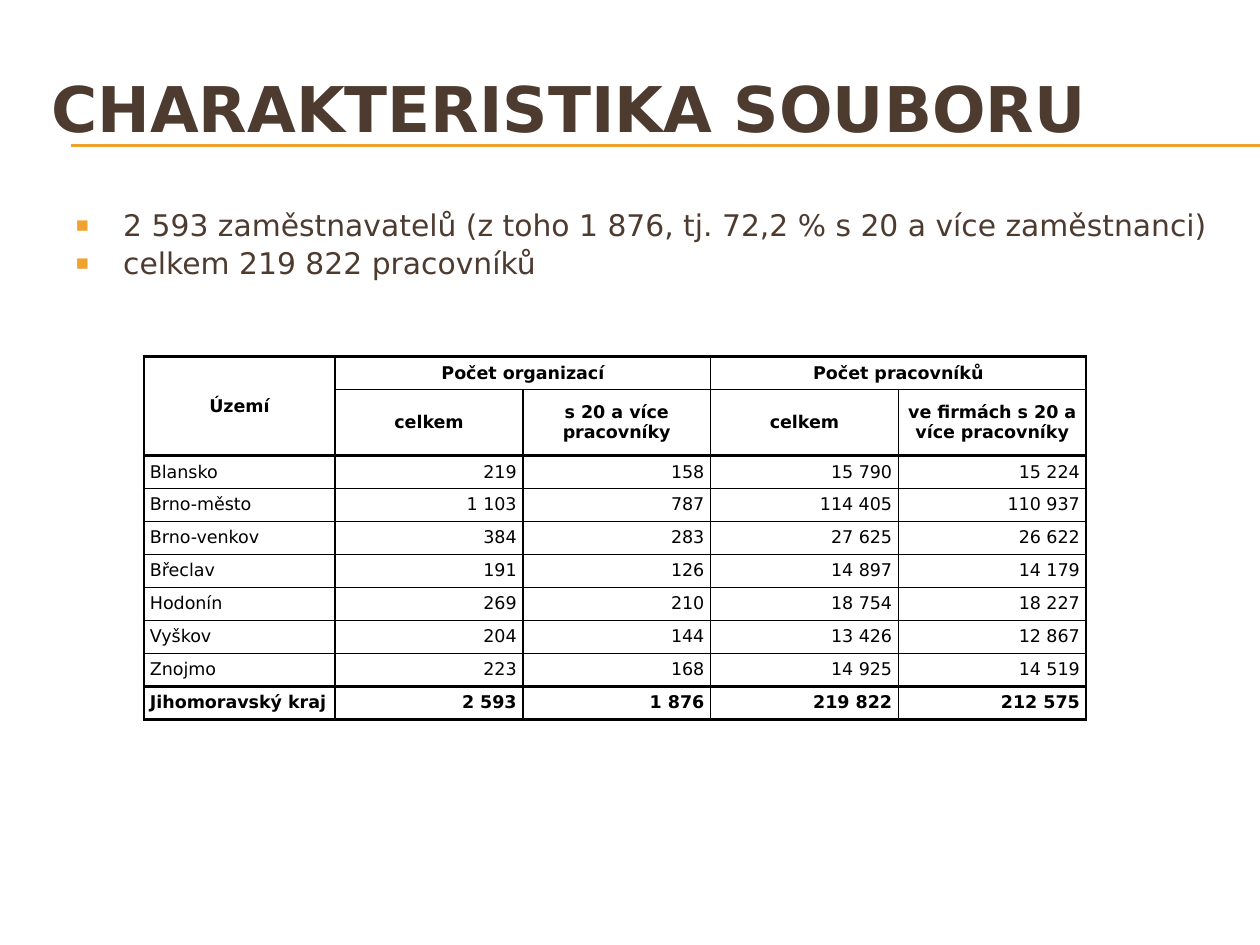
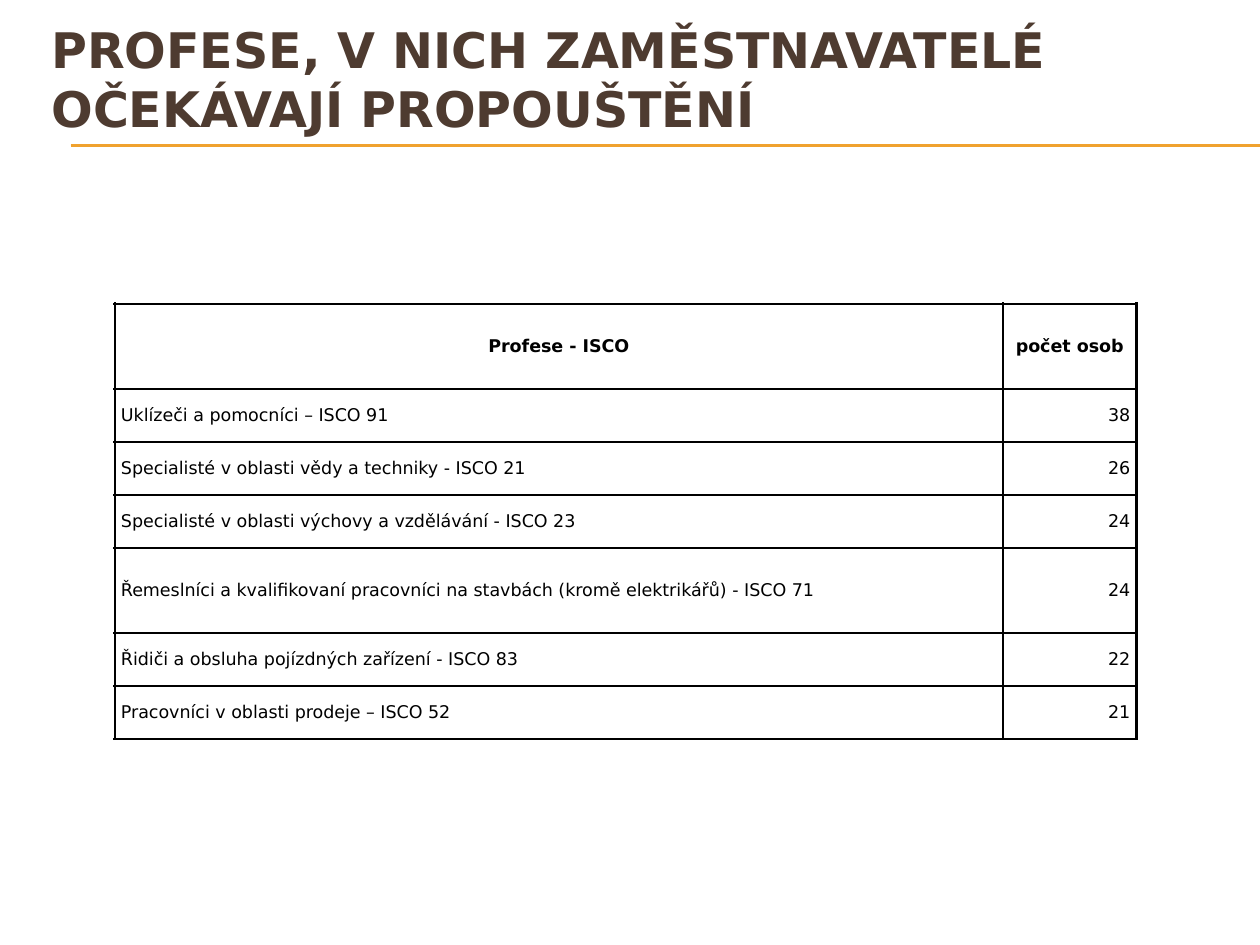
from dataclasses import dataclass

from pptx import Presentation
from pptx.dml.color import RGBColor as Color
from pptx.enum.shapes import MSO_CONNECTOR as Connector
from pptx.enum.text import MSO_ANCHOR as Anchor, PP_ALIGN as Align
from pptx.oxml.ns import qn
from pptx.util import Inches, Pt
from lxml.etree import SubElement

GRID_COLUMNS, GRID_ROWS = 100, 75


@dataclass(frozen=True)
class Theme:
    font: str = "DejaVu Sans"
    ink: str = "4E3B30"
    accent: str = "F0A22E"
    table_ink: str = "000000"
    title_size: int = 36
    long_title_size: int = 28
    body_size: int = 17
    table_size: int = 10
    rule_width: float = 0.75
    thin: float = 1
    heavy: float = 1.5


def set_attributes(target, values):
    for name, value in values.items():
        setattr(target, name, value)


class Deck:
    """Holds the theme and the current slide; lengths are grid columns and rows."""

    def __init__(self, theme):
        self.theme = theme
        self.presentation = Presentation()
        self.presentation.slide_width = Inches(10)
        self.presentation.slide_height = Inches(7.5)
        self.slide = None

    def across(self, columns):
        return round(self.presentation.slide_width * columns / GRID_COLUMNS)

    def down(self, rows):
        return round(self.presentation.slide_height * rows / GRID_ROWS)

    def place(self, left, top, width, height):
        return self.across(left), self.down(top), self.across(width), self.down(height)

    def style(self, font, size, color, bold=False):
        set_attributes(font, {"name": self.theme.font, "size": Pt(size), "bold": bold})
        font.color.rgb = Color.from_string(color)

    def add_slide(self, title, box, size):
        """Start a slide with its title and the double rule below it."""
        layout = self.presentation.slide_layouts[6]
        self.slide = self.presentation.slides.add_slide(layout)
        for row in (11.5, 11.6):
            self.add_rule(5.6, GRID_COLUMNS, row)
        frame = self.add_text_frame(box, Anchor.MIDDLE)
        frame.text = title
        self.style(frame.paragraphs[0].runs[0].font, size, self.theme.ink, bold=True)

    def add_rule(self, start, end, row):
        rule = self.slide.shapes.add_connector(
            Connector.STRAIGHT,
            self.across(start), self.down(row), self.across(end), self.down(row))
        rule.line.color.rgb = Color.from_string(self.theme.accent)
        rule.line.width = Pt(self.theme.rule_width)
        SubElement(rule._element.spPr, qn("a:effectLst"))

    def add_text_frame(self, box, anchor):
        frame = self.slide.shapes.add_textbox(*self.place(*box)).text_frame
        set_attributes(frame, {"word_wrap": True, "vertical_anchor": anchor})
        return frame

    def add_bullets(self, items, box, indent=3.8):
        frame = self.add_text_frame(box, Anchor.TOP)
        size = self.theme.body_size
        for index, item in enumerate(items):
            paragraph = frame.add_paragraph() if index else frame.paragraphs[0]
            paragraph.line_spacing = 0.9
            paragraph.space_before = Pt(0.2 * size if index else 0)
            self.add_bullet_mark(paragraph, self.across(indent))
            run = paragraph.add_run()
            run.text = item
            self.style(run.font, size, self.theme.ink)

    def add_bullet_mark(self, paragraph, indent):
        properties = paragraph._element.get_or_add_pPr()
        properties.set("marL", str(indent))
        properties.set("indent", str(-indent))
        color = SubElement(properties, qn("a:buClr"))
        SubElement(color, qn("a:srgbClr"), val=self.theme.accent)
        SubElement(properties, qn("a:buSzPct"), val="70000")
        SubElement(properties, qn("a:buFont"), typeface=self.theme.font)
        SubElement(properties, qn("a:buChar"), char="▪")

    def add_table(self, rows, left, top, widths, heights, header_rows=1,
                  merges=(), heavy_columns=(), heavy_rows=(), total_row=False):
        """Draw a ruled table; the outline, header edge and listed edges are heavy."""
        box = self.place(left, top, sum(widths), sum(heights))
        table = self.slide.shapes.add_table(len(rows), len(widths), *box).table
        set_attributes(table, {"first_row": False, "horz_banding": False})
        for column, width in zip(table.columns, widths):
            column.width = self.across(width)
        for row, height in zip(table.rows, heights):
            row.height = self.down(height)
        for first, last in merges:
            table.cell(*first).merge(table.cell(*last))

        heavy_x = {0, len(widths), *heavy_columns}
        heavy_y = {0, header_rows, len(rows), *heavy_rows}
        for y, row in enumerate(rows):
            is_header = y < header_rows
            is_bold = is_header or (total_row and y == len(rows) - 1)
            for x, text in enumerate(row):
                cell = table.cell(y, x)
                if cell.is_spanned:
                    continue
                body_align = Align.RIGHT if x else Align.LEFT
                self.fill_cell(cell, text, Align.CENTER if is_header else body_align, is_bold)
                self.border_cell(cell, {
                    "a:lnL": x in heavy_x,
                    "a:lnR": x + cell.span_width in heavy_x,
                    "a:lnT": y in heavy_y,
                    "a:lnB": y + cell.span_height in heavy_y,
                })
                cell.fill.background()

    def fill_cell(self, cell, text, alignment, bold):
        set_attributes(cell, {
            "text": text,
            "vertical_anchor": Anchor.MIDDLE,
            "margin_left": self.across(0.5),
            "margin_right": self.across(0.5),
            "margin_top": 0,
            "margin_bottom": 0,
        })
        paragraph = cell.text_frame.paragraphs[0]
        paragraph.alignment = alignment
        self.style(paragraph.runs[0].font, self.theme.table_size, self.theme.table_ink, bold)

    def border_cell(self, cell, edges):
        properties = cell._tc.get_or_add_tcPr()
        for tag, is_heavy in edges.items():
            width = Pt(self.theme.heavy if is_heavy else self.theme.thin)
            line = SubElement(properties, qn(tag), w=str(width))
            fill = SubElement(line, qn("a:solidFill"))
            SubElement(fill, qn("a:srgbClr"), val=self.theme.table_ink)


SURVEY_ROWS = [
    ["Území", "Počet organizací", "", "Počet pracovníků", ""],
    ["", "celkem", "s 20 a více pracovníky", "celkem", "ve firmách s 20 a více pracovníky"],
    ["Blansko", "219", "158", "15 790", "15 224"],
    ["Brno-město", "1 103", "787", "114 405", "110 937"],
    ["Brno-venkov", "384", "283", "27 625", "26 622"],
    ["Břeclav", "191", "126", "14 897", "14 179"],
    ["Hodonín", "269", "210", "18 754", "18 227"],
    ["Vyškov", "204", "144", "13 426", "12 867"],
    ["Znojmo", "223", "168", "14 925", "14 519"],
    ["Jihomoravský kraj", "2 593", "1 876", "219 822", "212 575"],
]

LAYOFF_ROWS = [
    ["Profese - ISCO", "počet osob"],
    ["Uklízeči a pomocníci – ISCO 91", "38"],
    ["Specialisté v oblasti vědy a techniky - ISCO 21", "26"],
    ["Specialisté v oblasti výchovy a vzdělávání - ISCO 23", "24"],
    ["Řemeslníci a kvalifikovaní pracovníci na stavbách (kromě elektrikářů) - ISCO 71", "24"],
    ["Řidiči a obsluha pojízdných zařízení - ISCO 83", "22"],
    ["Pracovníci v oblasti prodeje – ISCO 52", "21"],
]


def add_survey_slide(deck):
    deck.add_slide("CHARAKTERISTIKA SOUBORU", (3.1, 3.9, 95, 9.2), deck.theme.title_size)
    deck.add_bullets(
        ["2 593 zaměstnavatelů (z toho 1 876, tj. 72,2 % s 20 a více zaměstnanci)",
         "celkem 219 822 pracovníků"],
        (5, 16.2, 95, 8.8))
    row_height = 2.62
    deck.add_table(
        SURVEY_ROWS, 11.4, 28.3,
        widths=[15.2] + [14.9] * 4,
        heights=[row_height, 2 * row_height] + [row_height] * 8,
        header_rows=2,
        merges=[((0, 0), (1, 0)), ((0, 1), (0, 2)), ((0, 3), (0, 4))],
        heavy_columns=[1], heavy_rows=[len(SURVEY_ROWS) - 1], total_row=True)


def add_layoff_slide(deck):
    deck.add_slide("PROFESE, V NICH ZAMĚSTNAVATELÉ OČEKÁVAJÍ PROPOUŠTĚNÍ",
                   (3.1, 0, 89.8, 12.5), deck.theme.long_title_size)
    tall_rows = (0, 4)
    deck.add_table(
        LAYOFF_ROWS, 9.1, 24.1,
        widths=[70.5, 10.6],
        heights=[6.75 if row in tall_rows else 4.22 for row in range(len(LAYOFF_ROWS))])


def main():
    deck = Deck(Theme())
    add_survey_slide(deck)
    add_layoff_slide(deck)
    deck.presentation.save("out.pptx")


if __name__ == "__main__":
    main()
